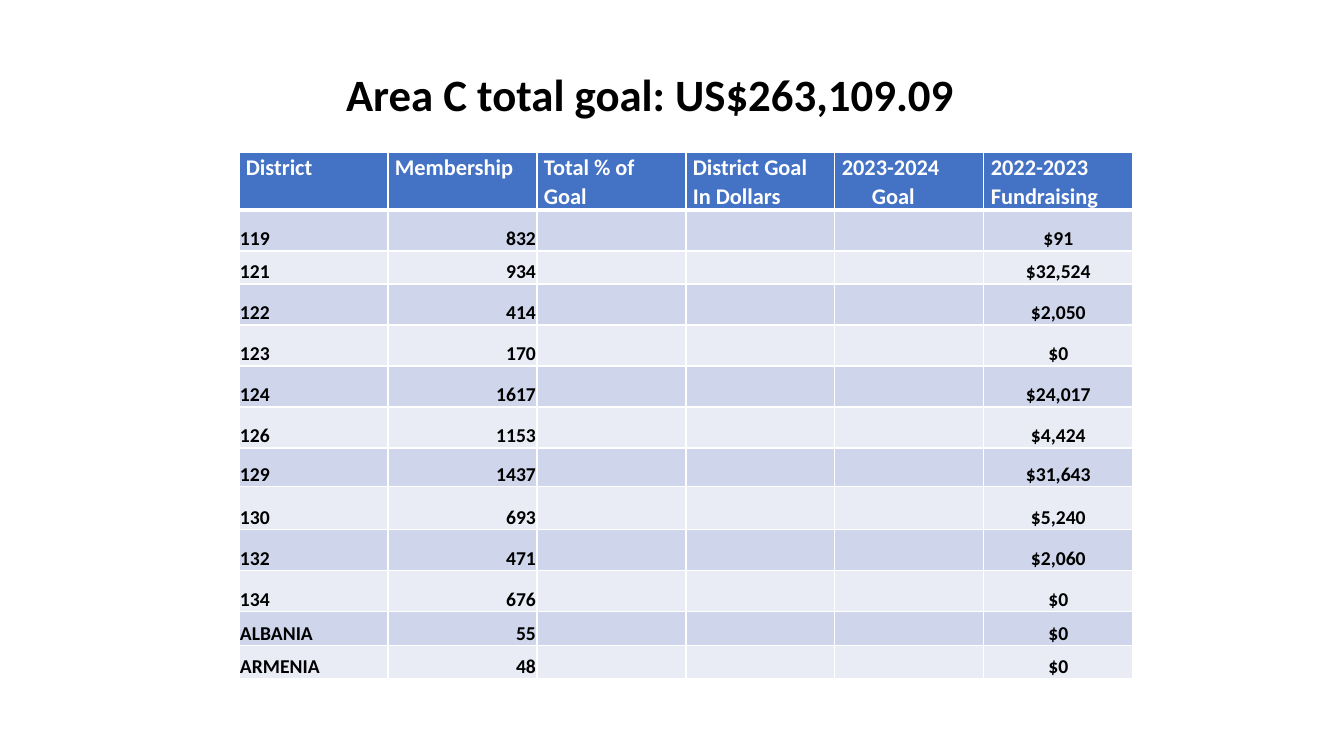
"""Builds the Area C fundraising goal slide with its district table."""
from lxml.etree import SubElement
from pptx import Presentation
from pptx.dml.color import RGBColor
from pptx.enum.text import MSO_ANCHOR, MSO_AUTO_SIZE, PP_ALIGN
from pptx.oxml.ns import qn
from pptx.util import Pt

SCALE = 914400 / 100.8
BLACK = RGBColor(0x00, 0x00, 0x00)
WHITE = RGBColor(0xFF, 0xFF, 0xFF)
HEADER_BLUE = RGBColor(0x44, 0x72, 0xC4)
BAND_DARK = RGBColor(0xCF, 0xD5, 0xEA)
BAND_LIGHT = RGBColor(0xE9, 0xEB, 0xF5)

HEADERS = [["District"], ["Membership"], ["Total % of Goal"],
           ["District Goal In Dollars"], ["2023-2024", "Goal"],
           ["2022-2023", "Fundraising"]]
DISTRICTS = [
    ("119", "832", "$91", 41),
    ("121", "934", "$32,524", 33),
    ("122", "414", "$2,050", 41),
    ("123", "170", "$0", 41),
    ("124", "1617", "$24,017", 41),
    ("126", "1153", "$4,424", 41),
    ("129", "1437", "$31,643", 39),
    ("130", "693", "$5,240", 43),
    ("132", "471", "$2,060", 41),
    ("134", "676", "$0", 41),
    ("ALBANIA", "55", "$0", 34),
    ("ARMENIA", "48", "$0", 33),
]
HEADER_HEIGHT = 58
COLUMN_WIDTH = 149
ALIGNMENTS = [PP_ALIGN.LEFT, PP_ALIGN.RIGHT] + [PP_ALIGN.CENTER] * 4


def px(length):
    return round(length * SCALE)


def add_text(paragraph, text, size, color):
    font = paragraph.font
    if text:
        run = paragraph.add_run()
        run.text = text
        font = run.font
    font.name = "Calibri"
    font.size = Pt(size)
    font.bold = True
    font.color.rgb = color


presentation = Presentation()
presentation.slide_width = px(1344)
presentation.slide_height = px(756)
slide = presentation.slides.add_slide(presentation.slide_layouts[5])

title = slide.shapes.title
title.left, title.top, title.width, title.height = map(px, (336, 58, 672, 66))
title_frame = title.text_frame
title_frame.word_wrap = True
title_frame.auto_size = MSO_AUTO_SIZE.SHAPE_TO_FIT_TEXT
title_frame.vertical_anchor = MSO_ANCHOR.TOP
title_paragraph = title_frame.paragraphs[0]
title_paragraph.alignment = PP_ALIGN.LEFT
title_paragraph.line_spacing = 1.07
title_paragraph.space_after = Pt(8)
add_text(title_paragraph, "Area C total goal: US$263,109.09", 32, BLACK)

row_heights = [HEADER_HEIGHT] + [district[-1] for district in DISTRICTS]
table = slide.shapes.add_table(
    len(row_heights), len(HEADERS), px(239), px(152),
    px(COLUMN_WIDTH * len(HEADERS)), px(sum(row_heights))).table
for column in table.columns:
    column.width = px(COLUMN_WIDTH)
for row, height in zip(table.rows, row_heights):
    row.height = px(height)

rows = [HEADERS] + [
    [[name], [members], [""], [""], [""], [raised]]
    for name, members, raised, height in DISTRICTS]
for row_index, row_values in enumerate(rows):
    is_header = row_index == 0
    band = BAND_DARK if row_index % 2 else BAND_LIGHT
    for column_index, lines in enumerate(row_values):
        cell = table.cell(row_index, column_index)
        cell.margin_left = cell.margin_right = px(7 if is_header else 1)
        cell.margin_top = px(0 if is_header else 1)
        cell.margin_bottom = 0
        cell.vertical_anchor = MSO_ANCHOR.TOP if is_header else MSO_ANCHOR.BOTTOM
        for side in ("lnL", "lnR", "lnT", "lnB"):
            below_header = (row_index, side) in ((0, "lnB"), (1, "lnT"))
            border = SubElement(cell._tc.get_or_add_tcPr(), qn(f"a:{side}"),
                                w=str(Pt(3 if below_header else 1)))
            border_fill = SubElement(border, qn("a:solidFill"))
            SubElement(border_fill, qn("a:srgbClr"), val=str(WHITE))
        cell.fill.solid()
        cell.fill.fore_color.rgb = HEADER_BLUE if is_header else band
        for line_index, line in enumerate(lines):
            frame = cell.text_frame
            paragraph = frame.add_paragraph() if line_index else frame.paragraphs[0]
            if is_header:
                paragraph.line_spacing = 1.07
                if line == "Goal":
                    paragraph._p.get_or_add_pPr().set("marL", str(px(30)))
                add_text(paragraph, line, 16, WHITE)
            else:
                paragraph.alignment = ALIGNMENTS[column_index]
                add_text(paragraph, line, 14, BLACK)

presentation.save("out.pptx")
